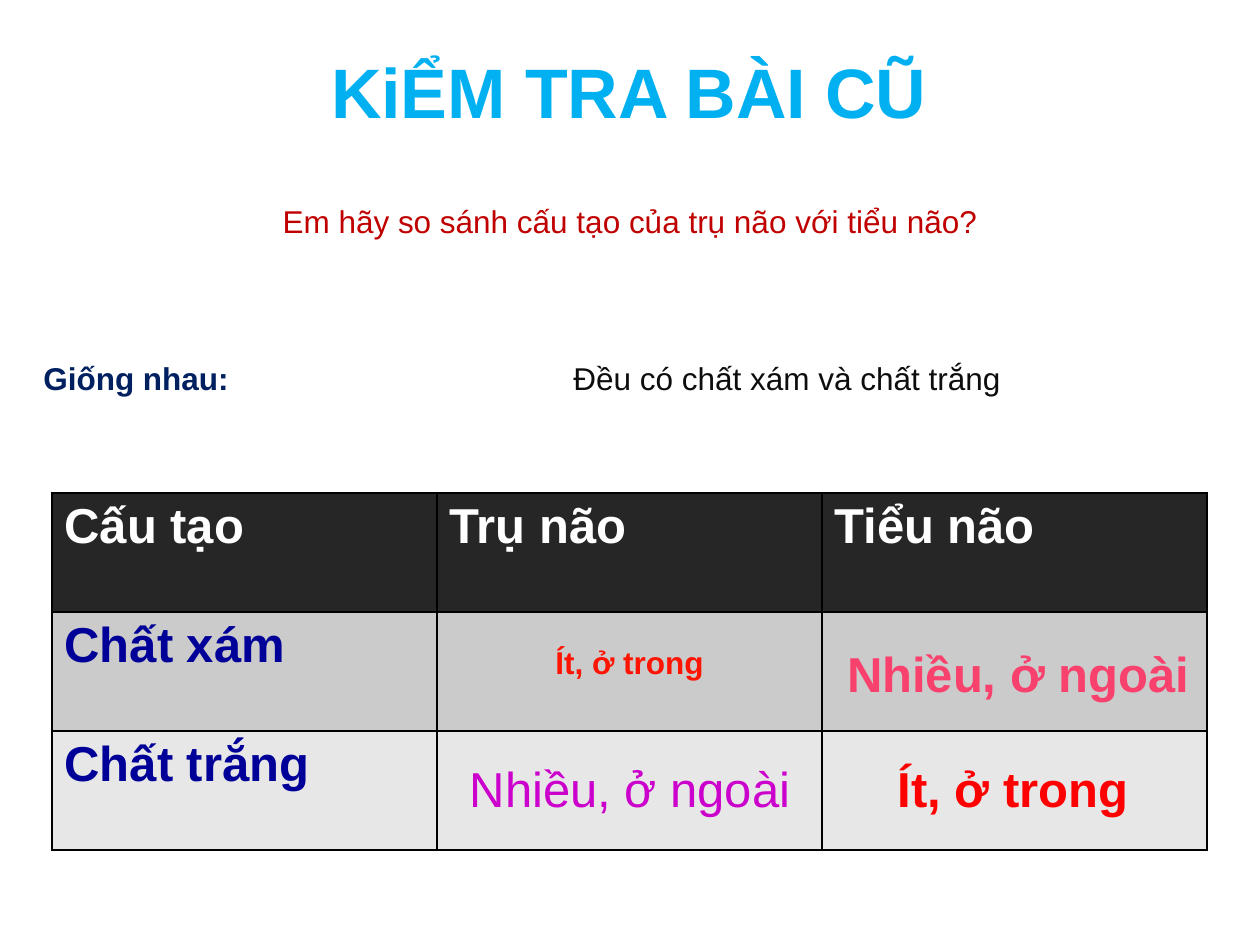
from dataclasses import dataclass

from lxml import etree
from pptx import Presentation
from pptx.dml.color import RGBColor
from pptx.enum.text import MSO_ANCHOR, MSO_AUTO_SIZE, PP_ALIGN
from pptx.oxml.ns import qn
from pptx.util import Emu, Pt

LEFT, CENTER = PP_ALIGN.LEFT, PP_ALIGN.CENTER
TOP, MIDDLE = MSO_ANCHOR.TOP, MSO_ANCHOR.MIDDLE
FIT_SHAPE = MSO_AUTO_SIZE.SHAPE_TO_FIT_TEXT
PX = 914400 / 126


@dataclass(frozen=True)
class Theme:
    font: str = "Arial"
    title_size: int = 40
    large: int = 28
    body: int = 18
    title: str = "00B0F0"
    title_edge: str = "020285"
    question: str = "C00000"
    label: str = "002060"
    ink: str = "0D0D0D"
    pink: str = "F9416D"
    white: str = "FFFFFF"
    row_label: str = "000099"
    orange_red: str = "FF1301"
    purple: str = "CC00CC"
    red: str = "FF0000"
    border: str = "000000"
    row_fills: tuple = ("262626", "CBCBCB", "E7E7E7")


T = Theme()


def add_line(parent, tag, color, width, index):
    """Insert a solid DrawingML line, used for letter outlines and cell borders."""
    ln = etree.Element(qn(tag), w=str(Pt(width)))
    fill = etree.SubElement(ln, qn("a:solidFill"))
    etree.SubElement(fill, qn("a:srgbClr"), val=color)
    parent.insert(index, ln)


def put_text(tf, text, size=T.body, color=T.ink, bold=False, align=CENTER,
             anchor=MIDDLE, wrap=True, outline=None):
    tf.word_wrap = wrap
    tf.vertical_anchor = anchor
    p = tf.paragraphs[0]
    p.alignment = align
    r = p.add_run()
    r.text = text
    r.font.name = T.font
    r.font.size = Pt(size)
    r.font.bold = bold
    r.font.color.rgb = RGBColor.from_string(color)
    if outline:
        add_line(r.font._element, "a:ln", *outline, 0)


prs = Presentation()
prs.slide_width, prs.slide_height = Emu(round(1260 * PX)), Emu(round(945 * PX))
s = prs.slides.add_slide(prs.slide_layouts[6])

# Comparison table
ROWS = [("Cấu tạo", "Trụ não", "Tiểu não"), ("Chất xám", "", ""), ("Chất trắng", "", "")]
COL_W, ROW_H = 385, 119
frame = s.shapes.add_table(3, 3, *(round(v * PX) for v in (52, 493, 3 * COL_W, 3 * ROW_H)))
table = frame.table
for col in table.columns:
    col.width = Emu(round(COL_W * PX))
for i, (row, labels) in enumerate(zip(table.rows, ROWS)):
    row.height = Emu(round(ROW_H * PX))
    for cell, label in zip(row.cells, labels):
        cell.fill.solid()
        cell.fill.fore_color.rgb = RGBColor.from_string(T.row_fills[i])
        for k, side in enumerate(("a:lnL", "a:lnR", "a:lnT", "a:lnB")):
            add_line(cell._tc.get_or_add_tcPr(), side, T.border, 1, k)
        if label:
            put_text(cell.text_frame, label, size=T.large, bold=True, align=LEFT,
                     anchor=TOP, color=T.row_label if i else T.white)

# Title, question, shared feature, then the answers lying over the table
TEXTS = [
    ((315, 42, 628, 97), "KiỂM TRA BÀI CŨ",
     dict(size=T.title_size, color=T.title, bold=True, anchor=TOP, wrap=False,
          outline=(T.title_edge, 2.48))),
    ((0, 147, 1260, 147), "Em hãy so sánh cấu tạo của trụ não với tiểu não?",
     dict(color=T.question)),
    ((31, 325, 357, 105), "Giống nhau:", dict(color=T.label, bold=True, align=LEFT)),
    ((388, 315, 798, 126), "Đều có chất xám và chất trắng", dict(outline=(T.pink, 0.75))),
    ((451, 609, 357, 105), "Ít, ở trong", dict(color=T.orange_red, bold=True)),
    ((441, 735, 378, 105), "Nhiều, ở ngoài", dict(size=T.large, color=T.purple)),
    ((829, 620, 378, 105), "Nhiều, ở ngoài", dict(size=T.large, color=T.pink, bold=True)),
    ((819, 735, 388, 105), "Ít, ở trong", dict(size=T.large, color=T.red, bold=True)),
]
for box, text, style in TEXTS:
    sp = s.shapes.add_textbox(*(round(v * PX) for v in box))
    put_text(sp.text_frame, text, **style)
    if not style.get("wrap", True):
        sp.text_frame.auto_size = FIT_SHAPE

prs.save("out.pptx")
